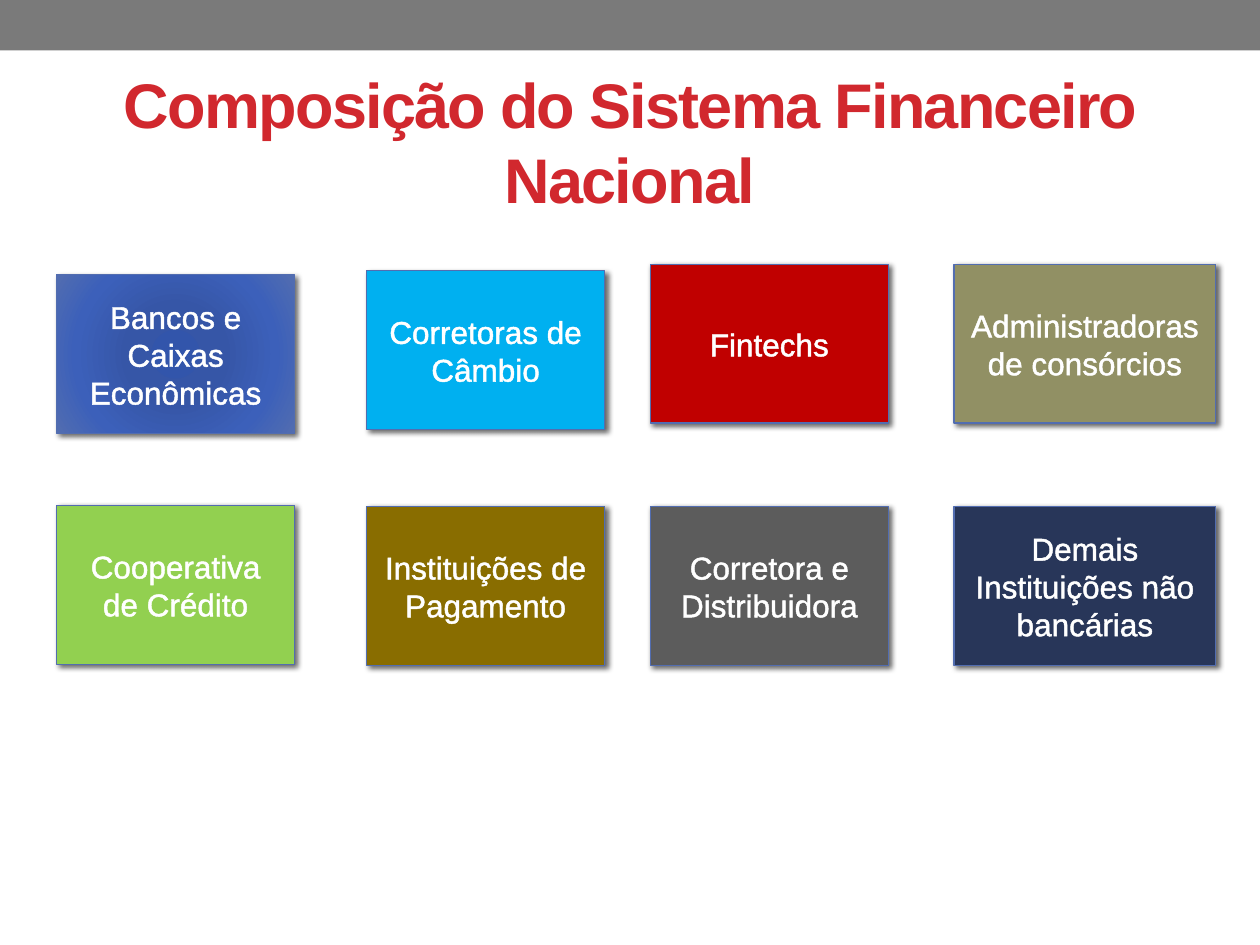
from dataclasses import dataclass

import pptx
import pptx.dml.color
import pptx.enum.shapes
import pptx.enum.text
import pptx.oxml
import pptx.oxml.ns
import pptx.util
from pptx.util import Cm

NS = 'xmlns:a="http://schemas.openxmlformats.org/drawingml/2006/main"'


@dataclass(frozen=True)
class Theme:
    font: str = "Arial"
    title_size: int = 36
    box_size: int = 18
    band: str = "7A7A7A"
    title: str = "D1282E"
    text: str = "FFFFFF"
    border: str = "526DB0"
    shadow: str = "000000"
    # Position in percent and colour of each gradient stop
    gradient: tuple = ((0, "3255AB"), (34, "3656A7"),
                       (70, "3C60BA"), (100, "526DB0"))


THEME = Theme()

# Columns: left and width; box height is common
COLUMNS = ((1.14, 4.8), (7.39, 4.8), (13.11, 4.8), (19.23, 5.28))
BOX_HEIGHT = 3.2

# Rows of boxes: text, top and fill (None means the gradient)
ROWS = (
    (("Bancos e Caixas Econômicas", 5.54, None),
     ("Corretoras de Câmbio", 5.46, "00B0F0"),
     ("Fintechs", 5.33, "C00000"),
     ("Administradoras de consórcios", 5.33, "919064")),
    (("Cooperativa de Crédito", 10.19, "92D050"),
     ("Instituições de Pagamento", 10.21, "896D00"),
     ("Corretora e Distribuidora", 10.21, "5C5C5C"),
     ("Demais Instituições não bancárias", 10.21, "283659")),
)


def rgb(value):
    return pptx.dml.color.RGBColor.from_string(value)


def set_text(sp, text, size, color, bold=False):
    tf = sp.text_frame
    tf.text = text
    tf.word_wrap = True
    tf.vertical_anchor = pptx.enum.text.MSO_ANCHOR.MIDDLE
    p = tf.paragraphs[0]
    p.alignment = pptx.enum.text.PP_ALIGN.CENTER
    r = p.runs[0]
    r.font.name = THEME.font
    r.font.size = pptx.util.Pt(size)
    r.font.bold = bold
    r.font.color.rgb = rgb(color)
    return r


def set_gradient(sp):
    stops = "".join(
        f'<a:gs pos="{pos * 1000}"><a:srgbClr val="{color}"/></a:gs>'
        for pos, color in THEME.gradient)
    grad = pptx.oxml.parse_xml(
        f'<a:gradFill {NS} rotWithShape="1"><a:gsLst>{stops}</a:gsLst>'
        '<a:path path="circle"><a:fillToRect l="50000" t="50000" r="50000" '
        'b="50000"/></a:path></a:gradFill>')
    sp._element.spPr.find(pptx.oxml.ns.qn("a:prstGeom")).addnext(grad)


def add_shadow(sp):
    sp._element.spPr.append(pptx.oxml.parse_xml(
        f'<a:effectLst {NS}><a:outerShdw blurRad="38100" dist="25400" '
        'dir="2700000" algn="br" rotWithShape="0">'
        f'<a:srgbClr val="{THEME.shadow}"><a:alpha val="60000"/></a:srgbClr>'
        '</a:outerShdw></a:effectLst>'))


def add_band(s, width):
    sp = s.shapes.add_shape(
        pptx.enum.shapes.MSO_SHAPE.RECTANGLE, 0, 0, width, Cm(1.02))
    sp.shadow.inherit = False
    sp.fill.solid()
    sp.fill.fore_color.rgb = rgb(THEME.band)
    sp.line.fill.background()


def add_title(s, text):
    sp = s.shapes.add_textbox(Cm(1.27), Cm(1.47), Cm(22.86), Cm(2.74))
    r = set_text(sp, text, THEME.title_size, THEME.title, bold=True)
    r.font._element.set("spc", "-100")


def add_box(s, left, top, width, text, fill):
    sp = s.shapes.add_shape(
        pptx.enum.shapes.MSO_SHAPE.FLOWCHART_PROCESS,
        Cm(left), Cm(top), Cm(width), Cm(BOX_HEIGHT))
    if fill is None:
        set_gradient(sp)
    else:
        sp.fill.solid()
        sp.fill.fore_color.rgb = rgb(fill)
    sp.line.color.rgb = rgb(THEME.border)
    sp.line.width = pptx.util.Pt(0.75)
    add_shadow(sp)
    r = set_text(sp, text, THEME.box_size, THEME.text)
    # Outline of the letters
    r.font._element.insert(0, pptx.oxml.parse_xml(
        f'<a:ln {NS} w="18415"><a:solidFill><a:srgbClr val="{THEME.text}"/>'
        '</a:solidFill><a:prstDash val="solid"/></a:ln>'))


def main():
    prs = pptx.Presentation()
    prs.slide_width, prs.slide_height = Cm(25.4), Cm(19.05)
    s = prs.slides.add_slide(prs.slide_layouts[6])

    # Heading
    add_band(s, prs.slide_width)
    add_title(s, "Composição do Sistema Financeiro Nacional")

    # Grid of institutions
    for row in ROWS:
        for (left, width), (text, top, fill) in zip(COLUMNS, row):
            add_box(s, left, top, width, text, fill)

    prs.save("out.pptx")


if __name__ == "__main__":
    main()
